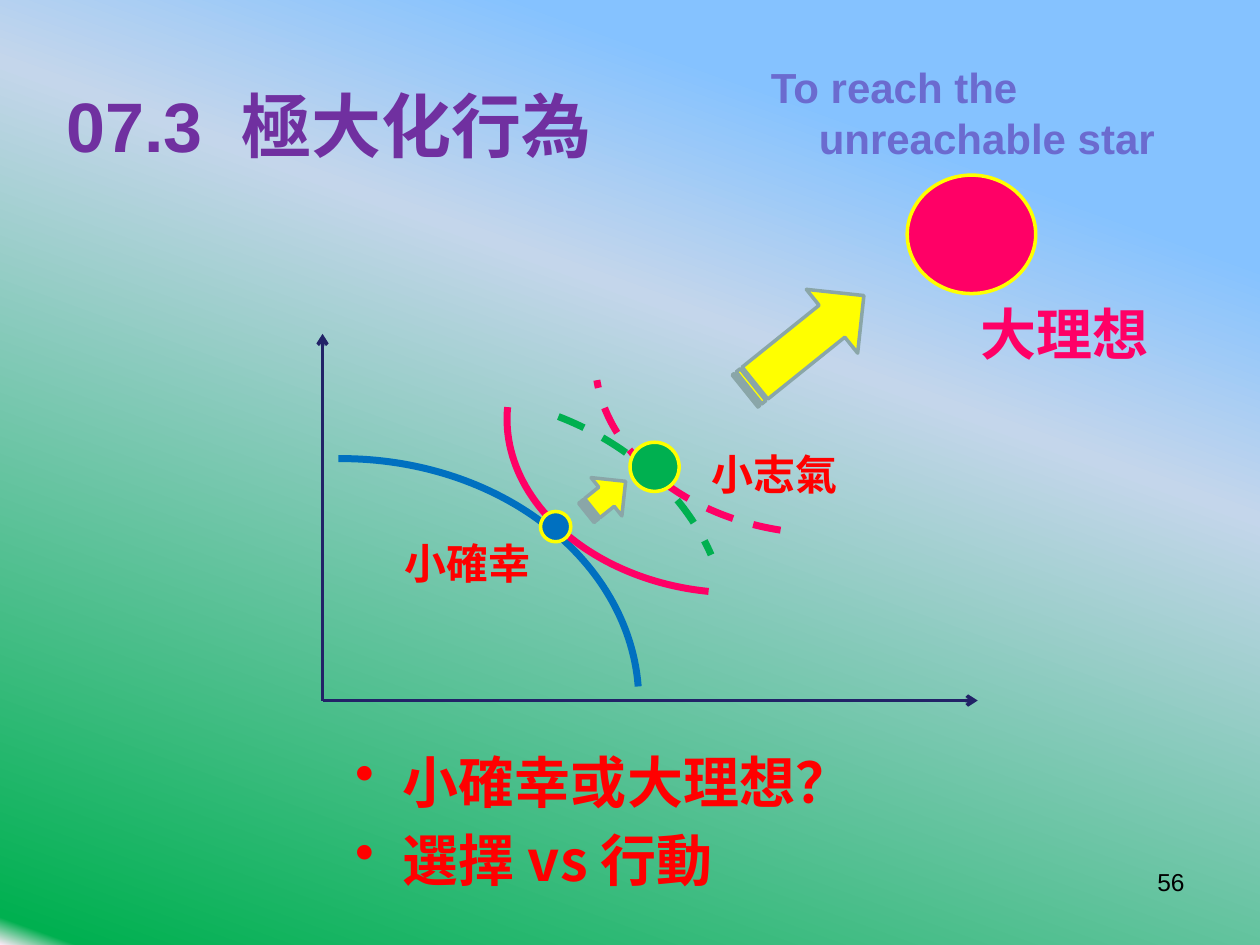
from copy import deepcopy

from lxml import etree
from pptx import Presentation
from pptx.dml.color import RGBColor
from pptx.enum.dml import MSO_LINE
from pptx.enum.shapes import MSO_CONNECTOR, MSO_SHAPE
from pptx.enum.text import MSO_ANCHOR, PP_ALIGN
from pptx.oxml.ns import qn
from pptx.util import Inches, Pt

LINE = MSO_CONNECTOR.STRAIGHT
DASH = MSO_LINE.DASH
ARC, OVAL = MSO_SHAPE.ARC, MSO_SHAPE.OVAL
ARROW = MSO_SHAPE.STRIPED_RIGHT_ARROW
MIDDLE, TOP = MSO_ANCHOR.MIDDLE, MSO_ANCHOR.TOP
LEFT, RIGHT = PP_ALIGN.LEFT, PP_ALIGN.RIGHT

SKY = RGBColor(0x85, 0xC2, 0xFF)
MIST = RGBColor(0xC4, 0xD6, 0xEB)
GREEN = RGBColor(0x00, 0xB0, 0x50)
BLUSH = RGBColor(0xFF, 0xEB, 0xFA)
PURPLE = RGBColor(0x70, 0x30, 0xA0)
LILAC = RGBColor(0x6B, 0x6B, 0xCF)
RED = RGBColor(0xFF, 0x00, 0x00)
PINK = RGBColor(0xFF, 0x00, 0x66)
BLUE = RGBColor(0x00, 0x70, 0xC0)
NAVY = RGBColor(0x22, 0x22, 0x67)
YELLOW = RGBColor(0xFF, 0xFF, 0x00)
GRAY = RGBColor(0x8A, 0xA6, 0xA8)
BLACK = RGBColor(0x00, 0x00, 0x00)

SANS, CJK = "Arial", "Noto Sans CJK SC"
HANG = Inches(0.38)


def paint_back(slide, stops, angle):
    fill = slide.background.fill
    fill.gradient()
    fill.gradient_angle = angle
    group = slide._element.find(".//" + qn("a:gsLst"))
    while len(group) < len(stops):
        group.append(deepcopy(group[0]))
    for stop, (place, color) in zip(fill.gradient_stops, stops):
        stop.position = place
        stop.color.rgb = color


def add_text(slide, box, lines, size, color, font=SANS, bold=True,
             wrap=True, align=LEFT, anchor=TOP, hang=False, bullet=False):
    frame = slide.shapes.add_textbox(*map(Inches, box)).text_frame
    frame.word_wrap = wrap
    frame.vertical_anchor = anchor
    frame.text = "\n".join(lines)
    for para in frame.paragraphs:
        para.alignment = align
        para.font.name = font
        para.font.size = Pt(size)
        para.font.bold = bold
        para.font.color.rgb = color
        props = para._p.get_or_add_pPr()
        if hang:
            props.set("marL", str(HANG))
            props.set("indent", str(-HANG))
            para.space_before = Pt(size * 0.2)
        if bullet:
            mark = etree.Element(qn("a:buChar"), char="•")
            props.find(qn("a:defRPr")).addprevious(mark)


def add_axis(slide, start, end):
    axis = slide.shapes.add_connector(LINE, *map(Inches, start + end))
    axis.line.color.rgb = NAVY
    axis.line.width = Pt(2)
    outline = axis.line._get_or_add_ln()
    etree.SubElement(outline, qn("a:tailEnd"), type="arrow")
    etree.SubElement(axis._element.spPr, qn("a:effectLst"))


def add_form(slide, kind, box, edge, width=2, fill=None, turn=0):
    form = slide.shapes.add_shape(kind, *map(Inches, box))
    form.shadow.inherit = False
    form.rotation = turn
    form.line.color.rgb = edge
    form.line.width = Pt(width)
    if fill is None:
        form.fill.background()
    else:
        form.fill.solid()
        form.fill.fore_color.rgb = fill
    return form


def add_curve(slide, box, color, start=270, end=0, turn=0, dash=False):
    curve = add_form(slide, ARC, box, color, 4, turn=turn)
    # Arc angles are stored in 60000ths of a degree, adjustments in 100000ths
    curve.adjustments[0] = start * 0.6
    curve.adjustments[1] = end * 0.6
    if dash:
        curve.line.dash_style = DASH


def main():
    deck = Presentation()
    deck.slide_width, deck.slide_height = Inches(10), Inches(7.5)
    slide = deck.slides.add_slide(deck.slide_layouts[6])
    paint_back(slide, [(0.19, SKY), (0.37, MIST), (0.98, GREEN), (1, BLUSH)], 250)

    # Title and questions
    add_text(slide, (0.43, 0.36, 9, 1.25), ["07.3  極大化行為"], 40, PURPLE,
             anchor=MIDDLE)
    add_text(slide, (2.72, 5.88, 5.04, 1.34), ["小確幸或大理想？", "選擇 vs 行動"],
             32, RED, CJK, hang=True, bullet=True)

    # Axes from a shared corner
    corner = (2.56, 5.56)
    add_axis(slide, corner, (7.76, 5.56))
    add_axis(slide, corner, (2.56, 2.65))

    # Limits and preference curves, now (solid) and later (dashed)
    add_curve(slide, (0.35, 3.64, 4.72, 3.86), BLUE, 269.28, 357.05)
    add_curve(slide, (4.02, 2.1, 3.46, 2.6), PINK, turn=185.6)
    add_curve(slide, (4.72, 1.63, 3.46, 2.6), PINK, 275.7, 351.48, 185.6, True)
    add_curve(slide, (1.06, 3.12, 4.72, 3.86), GREEN, 300.13, 343.81, dash=True)

    # Goals
    for box, fill in [((7.2, 1.39, 1.02, 0.94), PINK),
                      ((4.29, 4.06, 0.24, 0.24), BLUE),
                      ((5, 3.51, 0.39, 0.39), GREEN)]:
        add_form(slide, OVAL, box, YELLOW, fill=fill)

    # Goal labels
    for box, text, size, color in [((3.11, 4.22, 1.21, 0.5), "小確幸", 24, RED),
                                   ((5.55, 3.51, 1.21, 0.5), "小志氣", 24, RED),
                                   ((7.68, 2.33, 1.55, 0.64), "大理想", 32, PINK)]:
        add_text(slide, box, [text], size, color, wrap=False)

    # Steps between goals
    for box in [(5.78, 2.4, 1.21, 0.65), (4.61, 3.75, 0.4, 0.39)]:
        add_form(slide, ARROW, box, GRAY, fill=YELLOW, turn=321.2)

    # Motto and page number
    add_text(slide, (6.02, 0.44, 3.7, 0.87), ["To reach the unreachable star"],
             24, LILAC, hang=True)
    add_text(slide, (7.17, 6.83, 2.33, 0.52), ["56"], 14, BLACK, bold=False,
             align=RIGHT)

    deck.save("out.pptx")


if __name__ == "__main__":
    main()
